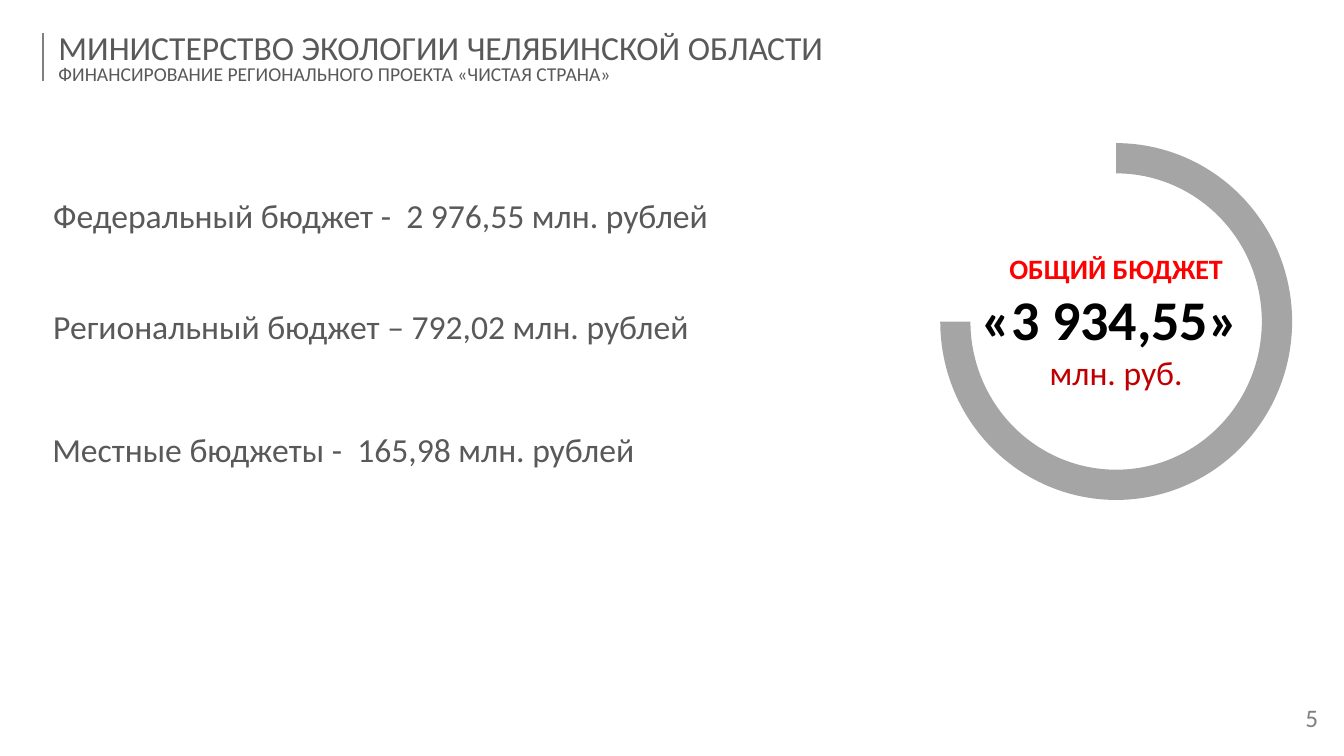
from pptx import Presentation
from pptx.dml.color import RGBColor
from pptx.enum.shapes import MSO_CONNECTOR, MSO_SHAPE
from pptx.enum.text import MSO_ANCHOR, MSO_AUTO_SIZE, PP_ALIGN
from pptx.util import Inches, Pt
from lxml import etree

# Content
TITLE = ["МИНИСТЕРСТВО ЭКОЛОГИИ ЧЕЛЯБИНСКОЙ ОБЛАСТИ",
         "ФИНАНСИРОВАНИЕ РЕГИОНАЛЬНОГО ПРОЕКТА «ЧИСТАЯ СТРАНА»"]
BUDGETS = [  # text, left, top, width
    ("Федеральный бюджет -  2 976,55 млн. рублей", 0.43, 1.88, 7.44),
    ("Региональный бюджет – 792,02 млн. рублей", 0.43, 2.99, 6.53),
    ("Местные бюджеты -  165,98 млн. рублей", 0.42, 4.21, 8.32),
]
TOTAL = ["ОБЩИЙ БЮДЖЕТ", "«3 934,55» ", "млн. руб."]
PAGE = "5"

# Style
FONT = "Calibri"
DARK = RGBColor(0x59, 0x59, 0x59)
GRAY = RGBColor(0x80, 0x80, 0x80)
RING = RGBColor(0xA5, 0xA5, 0xA5)
RED = RGBColor(0xFF, 0x00, 0x00)
BLACK = RGBColor(0x00, 0x00, 0x00)
CRIMSON = RGBColor(0xC0, 0x00, 0x00)
LEFT, CENTER, JUSTIFY = PP_ALIGN.LEFT, PP_ALIGN.CENTER, PP_ALIGN.JUSTIFY
TOP, MIDDLE = MSO_ANCHOR.TOP, MSO_ANCHOR.MIDDLE

# Layout, inches
WIDTH, HEIGHT = 13.33, 7.5
RING_W, RING_H, RING_BAND = 3.49, 3.54, 0.3
RING_X, RING_Y = 11.07, 3.19  # centre of the ring
TOTAL_W, TOTAL_H = 3.15, 1.51
PAGE_W, PAGE_H = 0.64, 0.5


def box(left, top, width, height):
    return [Inches(v) for v in (left, top, width, height)]


def centred(x, y, width, height):
    return box(x - width / 2, y - height / 2, width, height)


def write(sp, lines, styles, align, anchor=TOP, spacing=1.0):
    """Fill a shape with lines; each style is (size, colour, bold)."""
    tf = sp.text_frame
    tf.word_wrap = True
    tf.auto_size = MSO_AUTO_SIZE.NONE
    tf.vertical_anchor = anchor
    tf.text = "\n".join(lines)
    for p, (size, color, bold) in zip(tf.paragraphs, styles):
        p.alignment = align
        p.line_spacing = spacing
        font = p.runs[0].font
        font.name, font.size, font.bold = FONT, Pt(size), bold
        font.color.rgb = color


prs = Presentation()
prs.slide_width, prs.slide_height = Inches(WIDTH), Inches(HEIGHT)
s = prs.slides.add_slide(prs.slide_layouts[5])

# Title with its vertical rule
title = s.shapes.title
title.left, title.top, title.width, title.height = box(0.48, 0.26, WIDTH - 0.48, 0.67)
write(title, TITLE, [(24, DARK, False), (14, DARK, False)], LEFT, MIDDLE, 0.8)
rule = s.shapes.add_connector(MSO_CONNECTOR.STRAIGHT, Inches(0.43), Inches(0.33),
                              Inches(0.43), Inches(0.8))
rule.line.color.rgb = GRAY
rule.line.width = Pt(1.5)
etree.SubElement(rule.line._ln.getparent(),
                 "{http://schemas.openxmlformats.org/drawingml/2006/main}effectLst")

# Budget lines
for text, left, top, width in BUDGETS:
    sp = s.shapes.add_textbox(*box(left, top, width, 0.5))
    write(sp, [text], [(24, DARK, False)], JUSTIFY)

# Three-quarter ring: from 270 degrees clockwise to 180
ring = s.shapes.add_shape(MSO_SHAPE.BLOCK_ARC, *centred(RING_X, RING_Y, RING_W, RING_H))
for i, value in enumerate((270 * 0.6, 180 * 0.6, RING_BAND / RING_W)):
    ring.adjustments[i] = value
ring.shadow.inherit = False
ring.fill.solid()
ring.fill.fore_color.rgb = RING
ring.line.fill.background()

# Total inside the ring
sp = s.shapes.add_textbox(*centred(RING_X, RING_Y, TOTAL_W, TOTAL_H))
write(sp, TOTAL, [(20, RED, True), (40, BLACK, True), (24, CRIMSON, False)], CENTER, MIDDLE)

# Page number
sp = s.shapes.add_textbox(*box(WIDTH - PAGE_W, 6.9, PAGE_W, PAGE_H))
write(sp, [PAGE], [(18, GRAY, False)], CENTER, MIDDLE, 0.8)

prs.save("out.pptx")
